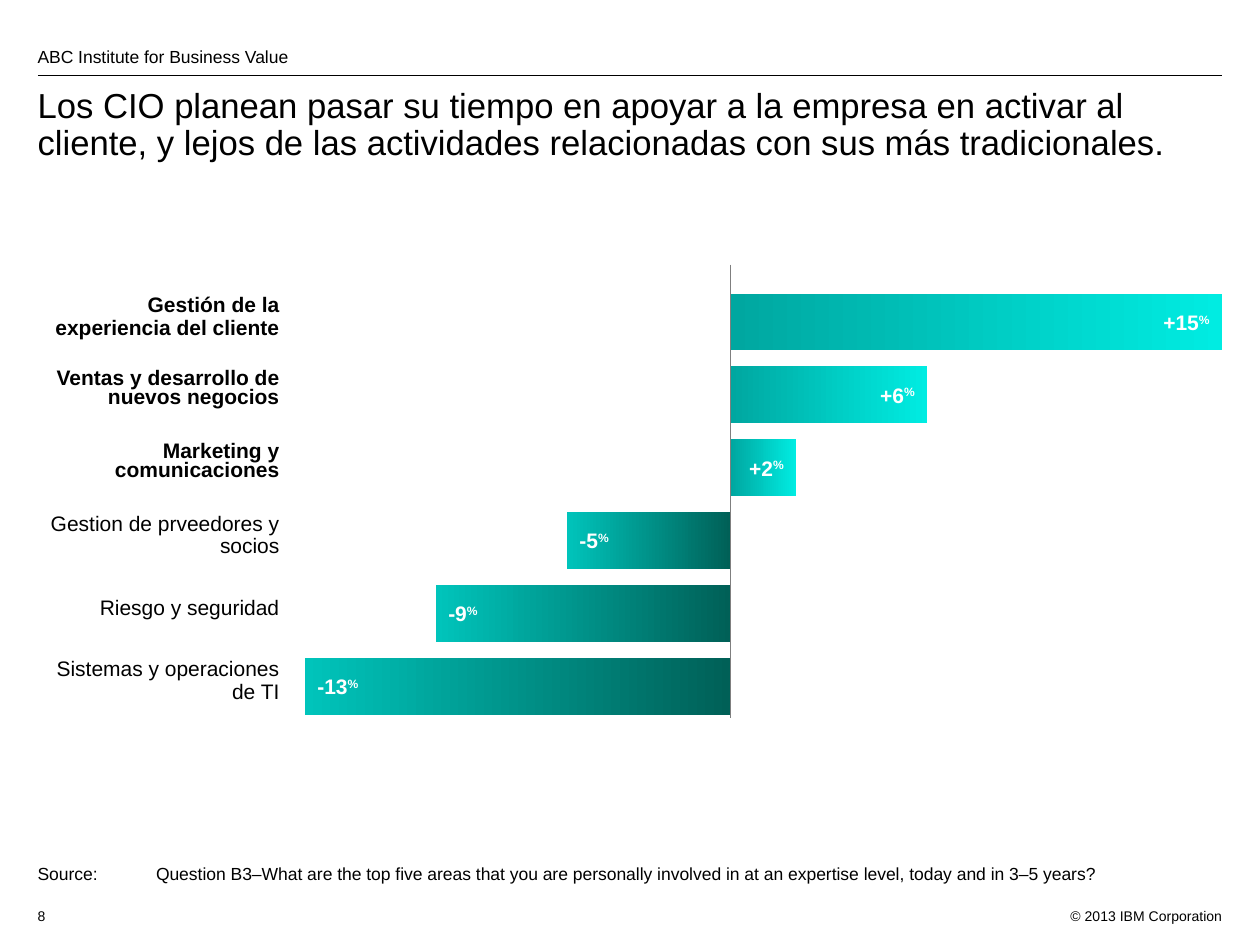
from dataclasses import dataclass

from lxml.etree import SubElement
from pptx import Presentation
from pptx.dml.color import RGBColor
from pptx.enum.shapes import MSO_CONNECTOR, MSO_SHAPE
from pptx.enum.text import MSO_ANCHOR, PP_ALIGN
from pptx.oxml.ns import qn
from pptx.util import Inches, Pt


@dataclass(frozen=True)
class Theme:
    font: str = "Arial"
    ink: str = "000000"
    bar_text: str = "FFFFFF"
    axis: str = "7F7F7F"
    gain: tuple = ("00A7A0", "00ECE2")
    loss: tuple = ("00C4BB", "006057")
    title: float = 19.8
    label: float = 12
    note: float = 10
    footer: float = 8
    rule: float = 0.75


@dataclass(frozen=True)
class Box:
    left: float
    top: float
    width: float
    height: float

    def inches(self):
        return [Inches(v) for v in (self.left, self.top, self.width, self.height)]


THEME = Theme()
PAGE = Box(0, 0, 10, 7.5)
INSETS = (0.1, 0.05, 0.1, 0.05)

# Category, change in percentage points, bold label, line spacing
AREAS = [
    ("Gestión de la experiencia del cliente", 15, True, 0.9),
    ("Ventas y desarrollo de nuevos negocios", 6, True, Pt(11)),
    ("Marketing y comunicaciones", 2, True, Pt(11)),
    ("Gestion de prveedores y socios", -5, False, 0.9),
    ("Riesgo y seguridad", -9, False, 0.9),
    ("Sistemas y operaciones de TI", -13, False, 0.9),
]


def add_run(paragraph, text, size, color=THEME.ink, bold=False, baseline=0):
    run = paragraph.add_run()
    run.text = text
    run.font.name = THEME.font
    run.font.size = Pt(size)
    run.font.bold = bold
    run.font.color.rgb = RGBColor.from_string(color)
    if baseline:
        run.font._element.set("baseline", str(baseline * 1000))


def prepare_frame(shape, align, anchor, insets=INSETS):
    frame = shape.text_frame
    frame.word_wrap = True
    frame.vertical_anchor = anchor
    (frame.margin_left, frame.margin_top,
     frame.margin_right, frame.margin_bottom) = [Inches(v) for v in insets]
    paragraph = frame.paragraphs[0]
    paragraph.alignment = align
    return paragraph


def add_text(slide, box, text, size, align=PP_ALIGN.LEFT, anchor=MSO_ANCHOR.TOP,
             insets=INSETS, bold=False, spacing=None):
    shape = slide.shapes.add_textbox(*box.inches())
    paragraph = prepare_frame(shape, align, anchor, insets)
    paragraph.line_spacing = spacing
    add_run(paragraph, text, size, bold=bold)
    return paragraph


def add_line(slide, start, end, color):
    line = slide.shapes.add_connector(
        MSO_CONNECTOR.STRAIGHT, *[Inches(v) for v in (*start, *end)])
    line.line.color.rgb = RGBColor.from_string(color)
    line.line.width = Pt(THEME.rule)
    SubElement(line._element.spPr, qn("a:effectLst"))


def add_bar(slide, box, value):
    shape = slide.shapes.add_shape(MSO_SHAPE.RECTANGLE, *box.inches())
    shape.shadow.inherit = False
    shape.line.fill.background()
    shape.fill.gradient()
    shape.fill.gradient_angle = 0
    colors = THEME.gain if value > 0 else THEME.loss
    for stop, color, position in zip(shape.fill.gradient_stops, colors, (0, 1)):
        stop.color.rgb = RGBColor.from_string(color)
        stop.position = position
    align = PP_ALIGN.RIGHT if value > 0 else PP_ALIGN.LEFT
    paragraph = prepare_frame(shape, align, MSO_ANCHOR.MIDDLE)
    add_run(paragraph, f"{value:+d}", THEME.label, THEME.bar_text, True)
    add_run(paragraph, "%", THEME.label, THEME.bar_text, True, baseline=30)


def build_header(slide, box):
    # Department name above a rule, then the title
    rule_y = box.top + 0.27
    add_text(slide, Box(box.left - 0.1, box.top, box.width, 0.2),
             "ABC Institute for Business Value", THEME.note,
             anchor=MSO_ANCHOR.BOTTOM, insets=(0.1, 0, 0.1, 0))
    add_line(slide, (box.left, rule_y), (box.left + box.width, rule_y), THEME.ink)
    add_text(slide, Box(box.left - 0.1, rule_y + 0.05, box.width + 0.25, 0.81),
             "Los CIO planean pasar su tiempo en apoyar a la empresa en activar al "
             "cliente, y lejos de las actividades relacionadas con sus más "
             "tradicionales.", THEME.title, spacing=0.9)


def build_bars(slide, box):
    # The plot spans the full range of values, right of the label column
    label_width = box.width * 0.22
    values = [area[1] for area in AREAS]
    plot_left = box.left + box.width - 7.28
    unit = 7.28 / (max(values) - min(values))
    axis_x = plot_left - min(values) * unit
    row = box.height / len(AREAS)
    for index, (name, value, bold, spacing) in enumerate(AREAS):
        top = box.top + index * row
        add_text(slide, Box(box.left, top, label_width, 0.45), name, THEME.label,
                 PP_ALIGN.RIGHT, MSO_ANCHOR.MIDDLE, (0, 0, 0.15, 0), bold, spacing)
        add_bar(slide, Box(axis_x + min(value, 0) * unit, top + 0.04,
                           abs(value) * unit, 0.45), value)
    # Zero axis
    add_line(slide, (axis_x, box.top - 0.19), (axis_x, box.top + box.height - 0.06),
             THEME.axis)


def build_footer(slide, box):
    # Source note with a hanging indent
    note = add_text(
        slide, Box(box.left, box.top, 8.7, 0.43),
        "Source:\tQuestion B3–What are the top five areas that you are personally "
        "involved in at an expertise level, today and in 3–5 years?", THEME.note)
    properties = note._p.get_or_add_pPr()
    properties.set("marL", str(Inches(0.44)))
    properties.set("indent", str(-Inches(0.44)))
    # Page number and copyright
    bottom = box.top + box.height - 0.2
    add_text(slide, Box(box.left, bottom, 0.4, 0.2), "8", THEME.footer)
    add_text(slide, Box(box.left + box.width - 1.5, bottom, 1.5, 0.2),
             "© 2013 IBM Corporation", THEME.footer, PP_ALIGN.RIGHT)


def main():
    presentation = Presentation()
    presentation.slide_width = Inches(PAGE.width)
    presentation.slide_height = Inches(PAGE.height)
    slide = presentation.slides.add_slide(presentation.slide_layouts[6])
    margin = PAGE.width * 0.03
    content_width = PAGE.width - 2 * margin
    build_header(slide, Box(margin, 0.33, content_width, 1.13))
    build_bars(slide, Box(margin, 2.29, content_width, 3.47))
    build_footer(slide, Box(margin - 0.1, 6.8, content_width + 0.2, 0.55))
    presentation.save("out.pptx")


if __name__ == "__main__":
    main()
